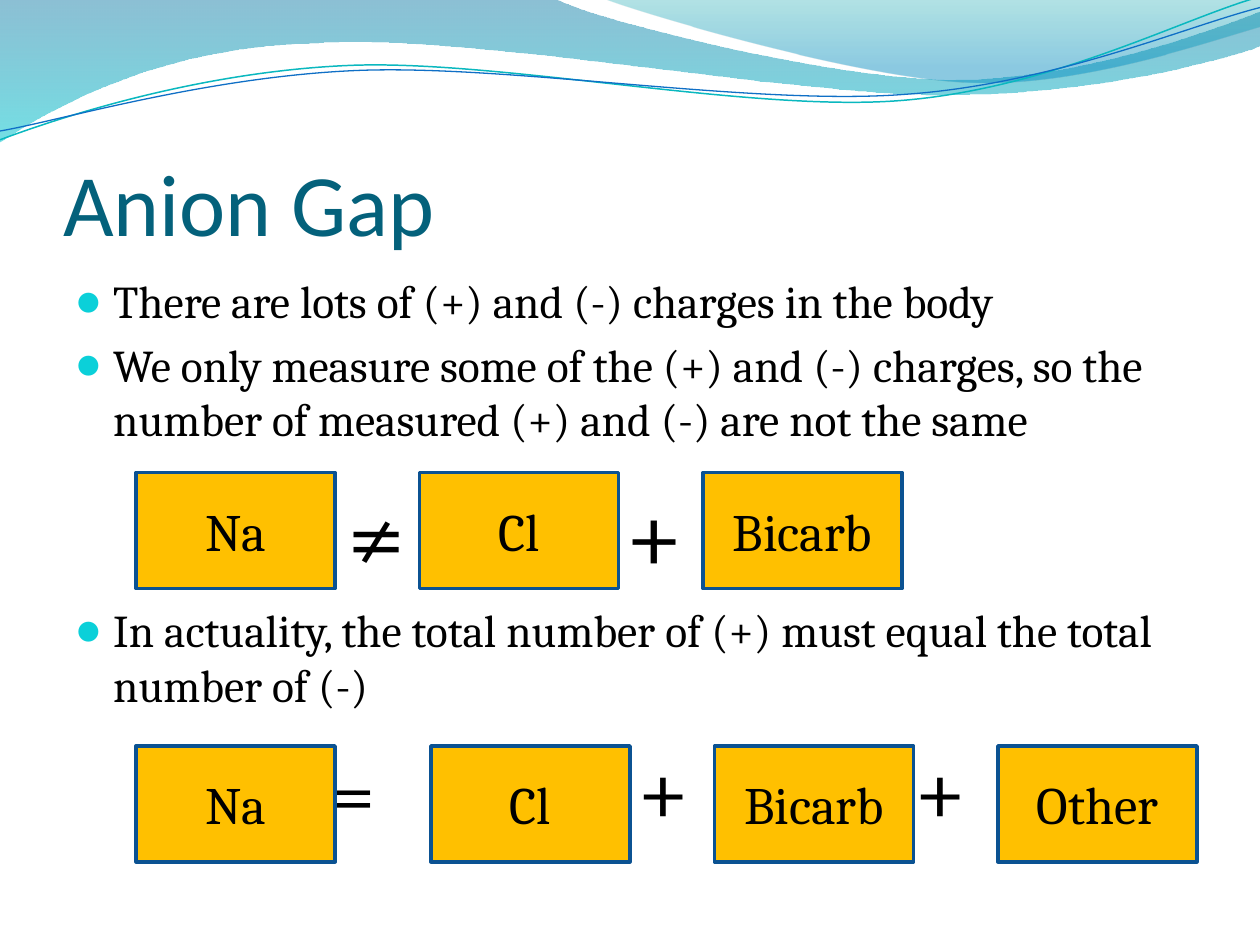
from lxml.etree import SubElement
from pptx import Presentation
from pptx.dml.color import RGBColor
from pptx.enum.shapes import MSO_SHAPE
from pptx.enum.text import MSO_ANCHOR, PP_ALIGN
from pptx.oxml.ns import qn
from pptx.util import Inches, Pt

COLORS = {
    "title": "04617B", "text": "000000", "bullet": "0BD0D9",
    "ion": "FFC000", "ion_edge": "0B5292",
    "teal_line": "0AB8BF", "blue_line": "0F6FC6",
    "deep_blue": "0074A1", "cyan": "00C6CF",
    "teal": "00A1A9", "sky": "008BBF",
}
BODY_FONT = "Cambria"

# Waves: a start point, then points (2 numbers) or Bezier curves (6 numbers)
LEFT_WAVE = [
    (0, 0), (4.4, -0.01), (4.76, 0.17, 6.64, 0.63, 7.58, 0.63),
    (8.53, 0.63, 9.58, 0.26, 10, 0.09), (10.01, 0.36),
    (9.83, 0.44, 8.7, 0.76, 7.46, 0.75), (6.22, 0.75, 3.82, 0.28, 2.57, 0.34),
    (1.29, 0.36, 0.46, 0.83, -0.01, 1.13), (0, 0),
]
RIGHT_WAVE = [
    (4.79, -0.01), (5.09, 0.11, 6.82, 0.62, 7.69, 0.65),
    (8.56, 0.69, 9.61, 0.32, 10, 0.21), (10, 0), (4.79, -0.01),
]
TEAL_CURVE = [
    (0, 1.11), (0.48, 0.93, 1.58, 0.57, 2.77, 0.52),
    (3.95, 0.47, 5.93, 0.89, 7.13, 0.8), (8.33, 0.71, 9.38, 0.15, 9.98, -0.02),
]
BLUE_CURVE = [
    (0, 1.04), (0.47, 0.96, 1.64, 0.61, 2.83, 0.56),
    (4.03, 0.51, 5.97, 0.84, 7.17, 0.75), (8.36, 0.67, 9.41, 0.21, 10, 0.06),
]


def rgb(name):
    return RGBColor.from_string(COLORS[name])


def style_run(span, size, color="text", font=BODY_FONT):
    span.font.size = Pt(size)
    span.font.name = font
    span.font.color.rgb = rgb(color)


def add_outline(page, outline, close):
    """Build a freeform through the end points, then bend its curved parts."""
    ends = [(Inches(piece[-2]), Inches(piece[-1])) for piece in outline]
    builder = page.shapes.build_freeform(*ends[0])
    builder.add_line_segments(ends[1:], close=close)
    shape = builder.convert_to_shape()
    shape.shadow.inherit = False
    segments = list(shape._element.iter(qn("a:lnTo")))
    for segment, piece in zip(segments, outline[1:]):
        if len(piece) == 6:
            segment.tag = qn("a:cubicBezTo")
            for index, (x, y) in enumerate((piece[0:2], piece[2:4])):
                handle = SubElement(segment, qn("a:pt"), x=str(Inches(x) - shape.left),
                                    y=str(Inches(y) - shape.top))
                segment.insert(index, handle)
    return shape


def add_wave(page, outline, stops):
    """Add a filled wave; each stop is (position, color, opacity percent)."""
    wave = add_outline(page, outline, close=True)
    wave.line.fill.background()
    wave.fill.gradient()
    wave.fill.gradient_angle = 270
    for stop, (position, color, _) in zip(wave.fill.gradient_stops, stops):
        stop.position = position
        stop.color.rgb = rgb(color)
    colors = wave._element.spPr.iter(qn("a:srgbClr"))
    for element, (_, _, opacity) in zip(colors, stops):
        SubElement(element, qn("a:alpha"), val=str(opacity * 1000))


def add_curve(page, outline, color, width):
    curve = add_outline(page, outline, close=False)
    curve.fill.background()
    curve.line.color.rgb = rgb(color)
    curve.line.width = Pt(width)


def set_title(page, text):
    title = page.shapes.title
    title.left, title.top, title.width, title.height = map(Inches, (0.5, 0.77, 9, 1.25))
    frame = title.text_frame
    frame.text = text
    frame.vertical_anchor = MSO_ANCHOR.BOTTOM
    frame.margin_left = frame.margin_right = frame.margin_bottom = 0
    frame.paragraphs[0].alignment = PP_ALIGN.LEFT
    style_run(frame.paragraphs[0].runs[0], 50, "title", "Calibri")


def format_bullet(props):
    props.set("marL", str(Inches(0.3)))
    props.set("indent", str(Inches(-0.3)))
    color = SubElement(props, qn("a:buClr"))
    SubElement(color, qn("a:srgbClr"), val=COLORS["bullet"])
    SubElement(props, qn("a:buSzPct"), val="95000")
    SubElement(props, qn("a:buFont"), typeface="Calibri")
    SubElement(props, qn("a:buChar"), char="●")


def format_operators(props, centers):
    tabs = SubElement(props, qn("a:tabLst"))
    for center in centers:
        SubElement(tabs, qn("a:tab"), pos=str(Inches(center)), algn="ctr")


def add_body(page, lines):
    """Each line is (runs, operator centers); no centers means a bullet."""
    box = page.shapes.add_textbox(Inches(0.5), Inches(2.12), Inches(9), Inches(4.8))
    frame = box.text_frame
    frame.word_wrap = True
    for index, (runs, centers) in enumerate(lines):
        para = frame.add_paragraph() if index else frame.paragraphs[0]
        for text, size in runs:
            span = para.add_run()
            span.text = text
            style_run(span, size)
        props = para._p.get_or_add_pPr()
        spacing = SubElement(props, qn("a:spcBef"))
        SubElement(spacing, qn("a:spcPct"), val="20000")
        if centers:
            format_operators(props, centers)
        else:
            format_bullet(props)


def add_ion(page, label, left, top):
    ion = page.shapes.add_shape(MSO_SHAPE.RECTANGLE, Inches(left), Inches(top),
                                Inches(1.58), Inches(0.92))
    ion.shadow.inherit = False
    ion.fill.solid()
    ion.fill.fore_color.rgb = rgb("ion")
    ion.line.color.rgb = rgb("ion_edge")
    ion.line.width = Pt(2)
    frame = ion.text_frame
    frame.text = label
    frame.vertical_anchor = MSO_ANCHOR.MIDDLE
    frame.paragraphs[0].alignment = PP_ALIGN.CENTER
    style_run(frame.paragraphs[0].runs[0], 30)


def add_equation(page, top, first_anion, anions):
    add_ion(page, "Na", 1.08, top)
    for index, label in enumerate(anions):
        add_ion(page, label, first_anion + 2.25 * index, top)


def main():
    deck = Presentation()
    deck.slide_width, deck.slide_height = Inches(10), Inches(7.5)
    page = deck.slides.add_slide(deck.slide_layouts[5])

    # Wave header
    add_wave(page, LEFT_WAVE, [(0, "deep_blue", 45), (1, "cyan", 55)])
    add_wave(page, RIGHT_WAVE, [(0, "teal", 30), (0.8, "sky", 45)])
    add_curve(page, TEAL_CURVE, "teal_line", 0.85)
    add_curve(page, BLUE_CURVE, "blue_line", 0.75)

    # Title and text, with the operators between the ions
    set_title(page, "Anion Gap")
    add_body(page, [
        ([("There are lots of (+) and (-) charges in the body", 26)], None),
        ([("We only measure some of the (+) and (-) charges, so the number of "
           "measured (+) and (-) are not the same", 26)], None),
        ([("\t≠\t+", 60)], (2.39, 4.6)),
        ([("In actuality, the total number of (+) must equal the total "
           "number of (-)", 26)], None),
        ([("\t=", 50), ("\t+\t+", 54)], (2.19, 4.67, 6.87)),
    ])

    # Measured ions, then all ions
    add_equation(page, 3.75, 3.33, ["Cl", "Bicarb"])
    add_equation(page, 5.92, 3.42, ["Cl", "Bicarb", "Other"])

    deck.save("out.pptx")


if __name__ == "__main__":
    main()
